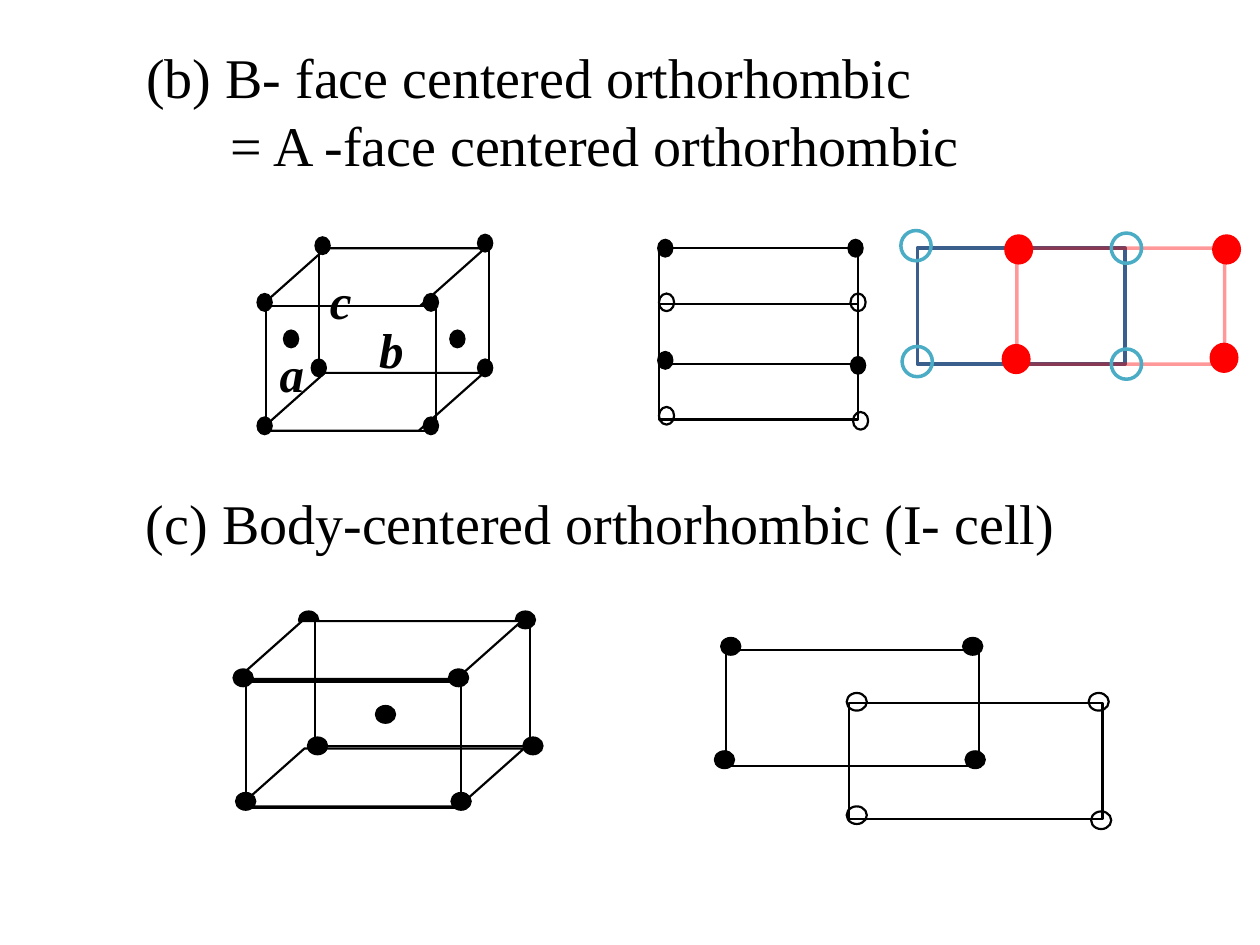
"""Build a slide on B-face-centered and body-centered orthorhombic cells."""
from lxml import etree
from pptx import Presentation
from pptx.dml.color import RGBColor
from pptx.enum.shapes import MSO_SHAPE
from pptx.enum.text import MSO_ANCHOR, MSO_AUTO_SIZE, PP_ALIGN
from pptx.oxml.ns import qn
from pptx.util import Pt

PX = 9144
FONT = "Times New Roman"
RECTANGLE, OVAL, SLANTED = MSO_SHAPE.RECTANGLE, MSO_SHAPE.OVAL, MSO_SHAPE.PARALLELOGRAM
TITLE_ONLY = 5
SLANT = 1.125
COLORS = {"black": "000000", "white": "FFFFFF", "red": "FF0000",
          "navy": "3A5F8C", "teal": "4BACC6"}

TITLE = [("(b) B- face centered orthorhombic", 0), ("= A -face centered orthorhombic", 67)]
TITLE_BOX = (106, 29, 700, 118)
SUBTITLE = [("(c) Body-centered orthorhombic (I- cell)", 0)]
SUBTITLE_BOX = (106, 383, 770, 64)
AXES = [("c", (252, 210, 59, 92)), ("a", (212, 268, 59, 92)), ("b", (291, 249, 59, 69))]

STYLES = {
    "face": (RECTANGLE, "white", "black", 1.25, None),
    "frame": (RECTANGLE, None, "black", 1.25, None),
    "top": (SLANTED, "white", "black", 1.25, None),
    "base": (SLANTED, None, "black", 1.25, None),
    "atom": (OVAL, "black", "black", 0.75, None),
    "hollow atom": (OVAL, None, "black", 1.25, None),
    "navy frame": (RECTANGLE, None, "navy", 2, None),
    "red frame": (RECTANGLE, None, "red", 2, 40),
    "red atom": (OVAL, "red", None, 0, None),
    "teal atom": (OVAL, None, "teal", 2, None),
}

B_FACE_CELL = [
    ("top", (178, 46), [(207, 197)]),
    ("face", (135, 99), [(211, 243)]),
    ("frame", (135, 99), [(253, 197)]),
    ("base", (178, 46), [(206, 296)]),
    ("atom", (12, 14), [(379, 186), (250, 188), (336, 233), (204, 233), (379, 285),
                        (247, 285), (336, 331), (204, 331), (357, 262), (225, 262)]),
]
B_FACE_PROJECTION = [
    ("face", (158, 92), [(523, 197)]),
    ("atom", (12, 14), [(673, 190), (522, 190), (522, 279), (675, 283)]),
    ("frame", (158, 92), [(523, 241)]),
    ("hollow atom", (12, 14), [(675, 233), (523, 233), (523, 323), (677, 327)]),
]
A_FACE_PROJECTION = [
    ("navy frame", (165, 92), [(728, 197)]),
    ("red frame", (165, 92), [(807, 197)]),
    ("red atom", (23, 24), [(962, 186), (797, 186), (960, 272), (795, 273)]),
    ("teal atom", (24, 24), [(715, 183), (882, 185), (716, 275), (882, 277)]),
]
BODY_CELL = [
    ("atom", (16, 14), [(237, 485), (409, 485)]),
    ("top", (226, 46), [(188, 493)]),
    ("face", (171, 100), [(195, 541)]),
    ("frame", (171, 99), [(250, 493)]),
    ("base", (226, 46), [(190, 594)]),
    ("atom", (16, 14), [(185, 531), (356, 531), (244, 585), (415, 585),
                        (187, 629), (358, 629), (298, 560)]),
]
BODY_PROJECTION = [
    ("face", (201, 92), [(576, 516)]),
    ("atom", (16, 14), [(572, 506), (764, 506), (567, 596), (766, 596)]),
    ("frame", (201, 92), [(674, 558)]),
    ("hollow atom", (16, 14), [(864, 550), (672, 550), (672, 640), (866, 644)]),
]


def emu(lengths):
    return [length * PX for length in lengths]


def rgb(name):
    return RGBColor.from_string(COLORS[name])


def write(shape, lines, size, emphasis=False):
    frame = shape.text_frame
    frame.word_wrap = True
    frame.auto_size = MSO_AUTO_SIZE.NONE
    frame.vertical_anchor = MSO_ANCHOR.TOP
    for index, (text, indent) in enumerate(lines):
        paragraph = frame.add_paragraph() if index else frame.paragraphs[0]
        paragraph.text = text
        paragraph.alignment = PP_ALIGN.LEFT
        if indent:
            paragraph._p.get_or_add_pPr().set("marL", str(indent * PX))
        font = paragraph.font
        font.name, font.size = FONT, Pt(size)
        font.bold = font.italic = emphasis
        font.color.rgb = rgb("black")


def draw(shapes, parts):
    for style, size, positions in parts:
        kind, fill, line, width, opacity = STYLES[style]
        for position in positions:
            shape = shapes.add_shape(kind, *emu(position + size))
            shape.shadow.inherit = False
            if kind == SLANTED:
                shape.adjustments[0] = SLANT
            if fill:
                shape.fill.solid()
                shape.fill.fore_color.rgb = rgb(fill)
            else:
                shape.fill.background()
            if line:
                shape.line.color.rgb = rgb(line)
                shape.line.width = Pt(width)
            else:
                shape.line.fill.background()
            if opacity:
                color = shape.line._ln.find(".//" + qn("a:srgbClr"))
                etree.SubElement(color, qn("a:alpha")).set("val", str(opacity * 1000))


def main():
    presentation = Presentation()
    presentation.slide_width, presentation.slide_height = emu((1000, 750))
    slide = presentation.slides.add_slide(presentation.slide_layouts[TITLE_ONLY])
    shapes = slide.shapes
    title = shapes.title
    title.left, title.top, title.width, title.height = emu(TITLE_BOX)
    write(title, TITLE, 32)

    draw(shapes, B_FACE_CELL)
    for letter, box in AXES:
        write(shapes.add_textbox(*emu(box)), [(letter, 0)], 28, emphasis=True)
    draw(shapes, B_FACE_PROJECTION + A_FACE_PROJECTION)

    write(shapes.add_textbox(*emu(SUBTITLE_BOX)), SUBTITLE, 32)
    draw(shapes, BODY_CELL + BODY_PROJECTION)
    presentation.save("out.pptx")


if __name__ == "__main__":
    main()
